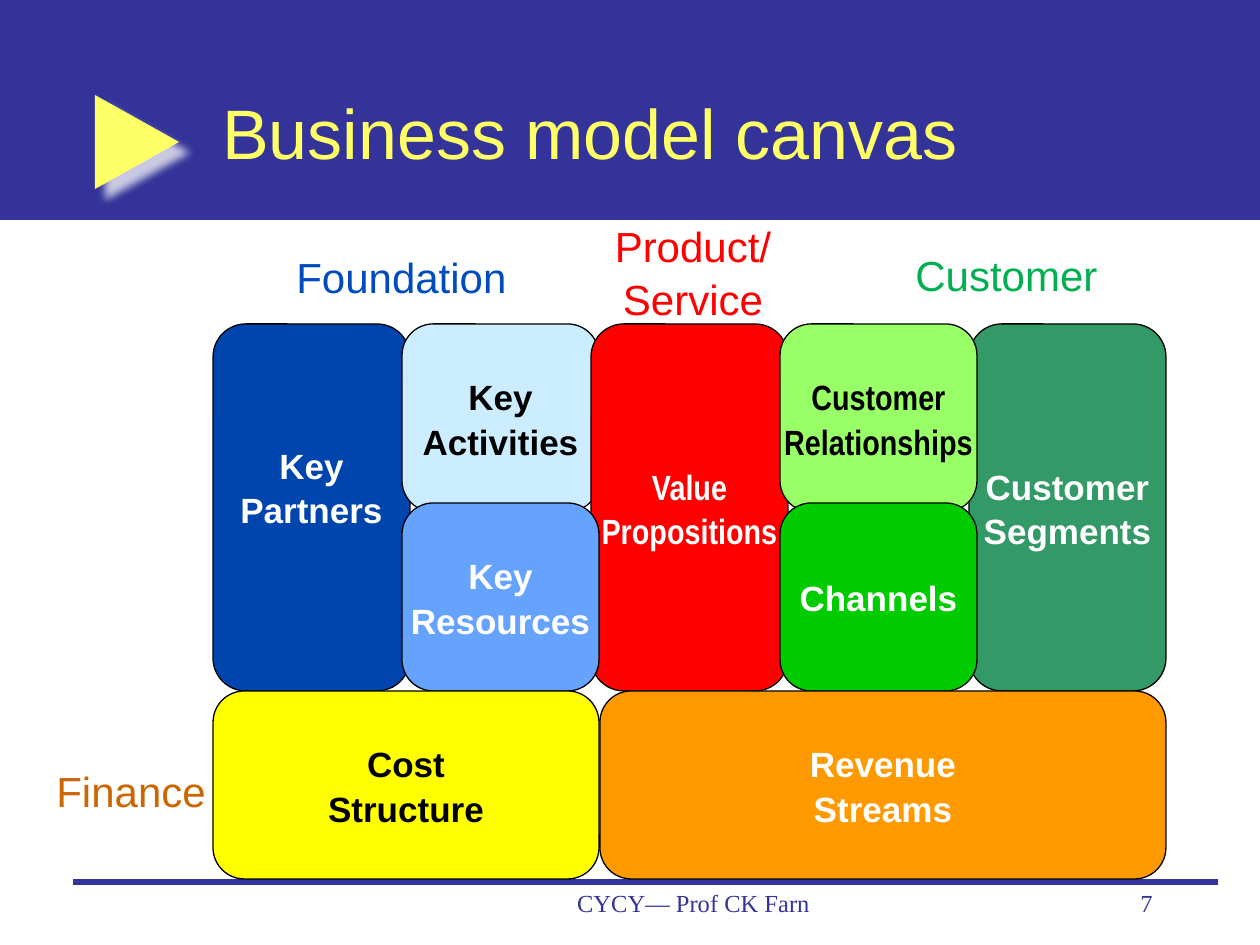
from lxml import etree
from pptx import Presentation
from pptx.dml.color import RGBColor
from pptx.enum.shapes import MSO_CONNECTOR, MSO_SHAPE
from pptx.enum.text import MSO_ANCHOR, PP_ALIGN
from pptx.oxml import parse_xml
from pptx.oxml.ns import qn
from pptx.util import Emu, Pt

RECTANGLE = MSO_SHAPE.RECTANGLE
ROUNDED = MSO_SHAPE.ROUNDED_RECTANGLE
ARROW = MSO_SHAPE.RIGHT_ARROW
STRAIGHT = MSO_CONNECTOR.STRAIGHT
LEFT, CENTER, RIGHT = PP_ALIGN.LEFT, PP_ALIGN.CENTER, PP_ALIGN.RIGHT
TOP, MIDDLE = MSO_ANCHOR.TOP, MSO_ANCHOR.MIDDLE

NAVY = RGBColor(0x33, 0x33, 0x99)
PALE_YELLOW = RGBColor(0xFF, 0xFF, 0x66)
WHITE = RGBColor(0xFF, 0xFF, 0xFF)
BLACK = RGBColor(0x00, 0x00, 0x00)
DARK_BLUE = RGBColor(0x00, 0x45, 0xAD)
ICE_BLUE = RGBColor(0xCC, 0xEC, 0xFF)
SKY_BLUE = RGBColor(0x66, 0xA3, 0xFF)
LABEL_BLUE = RGBColor(0x00, 0x4C, 0xBF)
RED = RGBColor(0xFF, 0x00, 0x00)
LIME = RGBColor(0x99, 0xFF, 0x66)
GREEN = RGBColor(0x00, 0xCC, 0x00)
SEA_GREEN = RGBColor(0x33, 0x99, 0x66)
LABEL_GREEN = RGBColor(0x00, 0xB0, 0x50)
YELLOW = RGBColor(0xFF, 0xFF, 0x00)
ORANGE = RGBColor(0xFF, 0x99, 0x00)
BROWN = RGBColor(0xCC, 0x66, 0x00)

PX = 914400 / 126


def px(*lengths):
    return [Emu(round(length * PX)) for length in lengths]


def write(shape, text, size, color, font="Arial", bold=False,
          align=LEFT, anchor=TOP, wrap=False, spacing=1.05):
    frame = shape.text_frame
    frame.word_wrap = wrap
    frame.vertical_anchor = anchor
    frame.text = text
    for paragraph in frame.paragraphs:
        paragraph.alignment = align
        paragraph.line_spacing = spacing
        paragraph.font.size = Pt(size)
        paragraph.font.name = font
        paragraph.font.bold = bold
        paragraph.font.color.rgb = color


presentation = Presentation()
presentation.slide_width, presentation.slide_height = px(1260, 945)
slide = presentation.slides.add_slide(presentation.slide_layouts[6])
shapes = slide.shapes

band = shapes.add_shape(RECTANGLE, *px(0, 0, 1260, 220))
marker = shapes.add_shape(ARROW, *px(95, 95, 84, 94))
marker.adjustments[0] = 0.38
marker.adjustments[1] = 1
for shape, color in ((band, NAVY), (marker, PALE_YELLOW)):
    shape.shadow.inherit = False
    shape.fill.solid()
    shape.fill.fore_color.rgb = color
    shape.line.fill.background()
marker_effects = marker._element.spPr.find(qn("a:effectLst"))
marker_effects.append(parse_xml(
    '<a:outerShdw xmlns:a="http://schemas.openxmlformats.org/drawingml/2006/main"'
    ' blurRad="63500" dist="107950" dir="2700000" algn="ctr" rotWithShape="0">'
    '<a:srgbClr val="FFFFFF"><a:alpha val="75000"/></a:srgbClr></a:outerShdw>'))

footer_rule = shapes.add_connector(STRAIGHT, *px(73, 882, 1218, 882))
footer_rule.line.color.rgb = NAVY
footer_rule.line.width = Pt(3)
etree.SubElement(footer_rule._element.spPr, qn("a:effectLst"))

footer = shapes.add_textbox(*px(494, 882, 399, 63))
write(footer, "CYCY— Prof CK Farn", 14, NAVY, font="Times New Roman",
      align=CENTER, wrap=True, spacing=1)
number = shapes.add_textbox(*px(903, 882, 262, 63))
write(number, "7", 14, NAVY, font="Times New Roman", align=RIGHT, wrap=True, spacing=1)
title = shapes.add_textbox(*px(210, 53, 955, 158))
write(title, "Business model canvas", 40, PALE_YELLOW, anchor=MIDDLE, wrap=True, spacing=1)

COLUMNS = [213 + 189 * index for index in range(5)]
UPPER, LOWER, FINANCE = 324, 503, 691
WIDTH, FULL, HALF = 197, 367, 188
tiles = (
    ("Key\nPartners", COLUMNS[0], UPPER, WIDTH, FULL, DARK_BLUE, WHITE, "Arial", 42),
    ("Key\nActivities", COLUMNS[1], UPPER, WIDTH, HALF, ICE_BLUE, BLACK, "Arial", 0),
    ("Value\nPropositions", COLUMNS[2], UPPER, WIDTH, FULL, RED, WHITE, "Arial Narrow", 0),
    ("Customer\nSegments", COLUMNS[4], UPPER, WIDTH, FULL, SEA_GREEN, WHITE, "Arial", 0),
    ("Key\nResources", COLUMNS[1], LOWER, WIDTH, HALF, SKY_BLUE, WHITE, "Arial", 0),
    ("Customer\nRelationships", COLUMNS[3], UPPER, WIDTH, HALF, LIME, BLACK, "Arial Narrow", 0),
    ("Channels", COLUMNS[3], LOWER, WIDTH, HALF, GREEN, WHITE, "Arial", 0),
    ("Cost\nStructure", COLUMNS[0], FINANCE, 386, HALF, YELLOW, BLACK, "Arial", 0),
    ("Revenue\nStreams", 600, FINANCE, 566, HALF, ORANGE, WHITE, "Arial", 0),
)
for text, left, top, width, height, fill, color, font, bottom in tiles:
    tile = shapes.add_shape(ROUNDED, *px(left, top, width, height))
    tile.shadow.inherit = False
    tile.fill.solid()
    tile.fill.fore_color.rgb = fill
    tile.line.color.rgb = BLACK
    tile.line.width = Pt(0.75)
    frame = tile.text_frame
    frame.margin_left, frame.margin_top, frame.margin_right, frame.margin_bottom = px(0, 0, 0, bottom)
    write(tile, text, 20, color, font=font, bold=True, align=CENTER, anchor=MIDDLE)

labels = (
    ("Foundation", 284, 243, 238, 63, LABEL_BLUE, LEFT),
    ("Customer", 903, 241, 209, 63, LABEL_GREEN, LEFT),
    ("Product/\nService", 601, 212, 184, 115, RED, CENTER),
    ("Finance", 44, 757, 176, 63, BROWN, LEFT),
)
for text, left, top, width, height, color, align in labels:
    label = shapes.add_textbox(*px(left, top, width, height))
    write(label, text, 24, color, align=align)

presentation.save("out.pptx")
